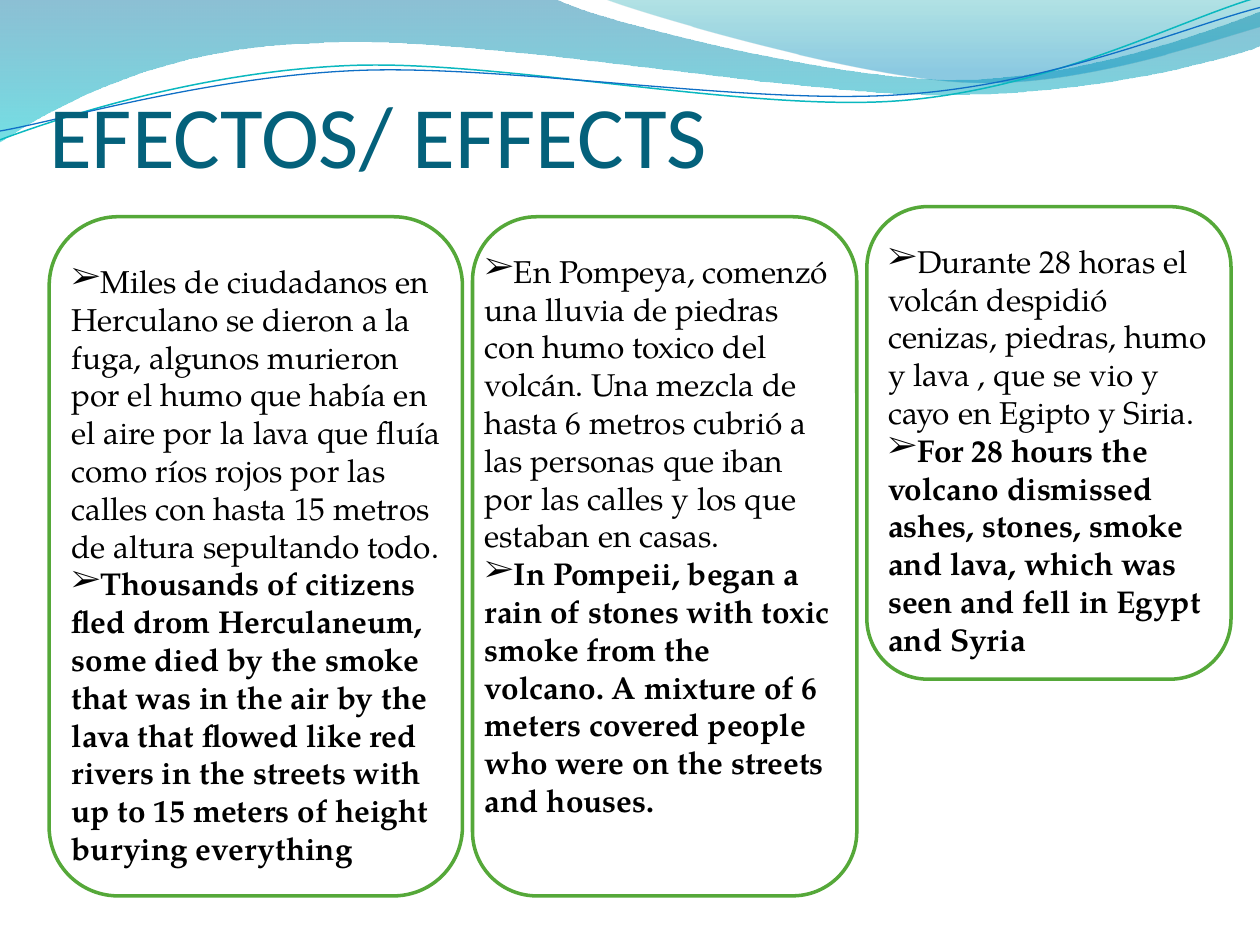
from math import cos, radians, sin

from lxml import etree
from pptx import Presentation
from pptx.dml.color import RGBColor
from pptx.enum.shapes import MSO_SHAPE
from pptx.enum.text import MSO_ANCHOR, PP_ALIGN
from pptx.oxml.ns import qn
from pptx.util import Inches, Pt

ROUNDED = MSO_SHAPE.ROUNDED_RECTANGLE
LEFT = PP_ALIGN.LEFT
TOP, BOTTOM = MSO_ANCHOR.TOP, MSO_ANCHOR.BOTTOM

THEME = {
    "title_font": "Calibri", "title_size": Pt(50), "title": RGBColor.from_string("04617B"),
    "body_font": "TeX Gyre Pagella", "body_size": Pt(18), "body": RGBColor.from_string("000000"),
    "frame": RGBColor.from_string("55A839"), "frame_width": Pt(2),
    # Gradient stops: position, colour, opacity in percent
    "wide_wave": [(0, "0074A1", 45), (1, "00C6CF", 55)],
    "right_wave": [(0, "00A1A9", 30), (0.8, "008BBF", 45)],
    "teal_line": ("0AB8BF", 0.85), "blue_line": ("0F6FC6", 0.75),
}
TILT = 2.7  # degrees anticlockwise


def add_outline(shapes, start, segments, closed):
    """Draw straight (2 numbers) and cubic Bézier (6 numbers) segments."""
    points = [start]
    for segment in segments:
        points += zip(segment[::2], segment[1::2])
    corners = [(Inches(x), Inches(y)) for x, y in points]
    builder = shapes.build_freeform(*corners[0])
    builder.add_line_segments(corners[1:], close=closed)
    shape = builder.convert_to_shape()
    shape.shadow.inherit = False
    # Join each three steps of a curve into one Bézier element
    steps = iter(list(shape._element.iter(qn("a:lnTo"))))
    for segment in segments:
        first = next(steps)
        if len(segment) == 6:
            curve = etree.Element(qn("a:cubicBezTo"))
            first.addprevious(curve)
            for step in (first, next(steps), next(steps)):
                curve.append(step[0])
                step.getparent().remove(step)
    return shape


def untilt(numbers, centre):
    """Turn points clockwise by TILT, so that the shape's rotation restores them."""
    c, s = cos(radians(TILT)), sin(radians(TILT))
    turned = []
    for x, y in zip(numbers[::2], numbers[1::2]):
        dx, dy = x - centre[0], y - centre[1]
        turned += [centre[0] + dx * c - dy * s, centre[1] + dx * s + dy * c]
    return turned


presentation = Presentation()
presentation.slide_width = Inches(10)
presentation.slide_height = Inches(7.5)
slide = presentation.slides.add_slide(presentation.slide_layouts[5])
shapes = slide.shapes

# Translucent waves across the top
waves = [
    ("wide_wave", (0, 0), [
        (4.4, -0.01), (4.76, 0.17, 6.64, 0.63, 7.58, 0.63),
        (8.53, 0.63, 9.58, 0.26, 10, 0.09), (10.01, 0.36),
        (9.83, 0.44, 8.7, 0.76, 7.46, 0.75), (6.22, 0.75, 3.82, 0.28, 2.57, 0.34),
        (1.29, 0.36, 0.46, 0.83, -0.01, 1.13), (0, 0)]),
    ("right_wave", (4.79, -0.01), [
        (5.09, 0.11, 6.82, 0.62, 7.69, 0.65), (8.56, 0.69, 9.61, 0.32, 10, 0.21),
        (10, 0), (4.79, -0.01)]),
]
for name, start, segments in waves:
    wave = add_outline(shapes, start, segments, True)
    wave.line.fill.background()
    wave.fill.gradient()
    wave.fill.gradient_angle = 270
    for stop, (position, colour, _) in zip(wave.fill.gradient_stops, THEME[name]):
        stop.position = position
        stop.color.rgb = RGBColor.from_string(colour)
    for element, (_, _, opacity) in zip(wave._element.iter(qn("a:srgbClr")), THEME[name]):
        etree.SubElement(element, qn("a:alpha")).set("val", str(opacity * 1000))

# Thin tilted lines that follow the waves
wave_lines = [
    ("teal_line", (4.99, 0.58), (0, 1.11), [
        (0.48, 0.93, 1.58, 0.57, 2.77, 0.52), (3.95, 0.47, 5.93, 0.89, 7.13, 0.8),
        (8.33, 0.71, 9.38, 0.15, 9.98, -0.02)]),
    ("blue_line", (5, 0.59), (0, 1.04), [
        (0.47, 0.96, 1.64, 0.61, 2.83, 0.56), (4.03, 0.51, 5.97, 0.84, 7.17, 0.75),
        (8.36, 0.67, 9.41, 0.21, 10, 0.06)]),
]
for name, centre, start, segments in wave_lines:
    level_segments = [untilt(segment, centre) for segment in segments]
    wave_line = add_outline(shapes, untilt(start, centre), level_segments, False)
    wave_line.rotation = 360 - TILT
    colour, width = THEME[name]
    wave_line.fill.background()
    wave_line.line.color.rgb = RGBColor.from_string(colour)
    wave_line.line.width = Pt(width)

# Title, brought in front of the waves
title = shapes.title
shapes._spTree.append(title._element)
title.left, title.top, title.width, title.height = map(Inches, (0.39, 0.23, 9, 1.25))
frame = title.text_frame
frame.margin_left = frame.margin_right = frame.margin_bottom = 0
frame.margin_top = Inches(0.05)
frame.vertical_anchor = BOTTOM
paragraph = frame.paragraphs[0]
paragraph.alignment = LEFT
run = paragraph.add_run()
run.text = "EFECTOS/ EFFECTS"
run.font.name = THEME["title_font"]
run.font.size = THEME["title_size"]
run.font.color.rgb = THEME["title"]

# Columns: text box, frame, Spanish text, English text
columns = [
    ((0.47, 2.03, 3.13, 4.95), (0.39, 1.72, 3.28, 5.39),
     "Miles de ciudadanos en Herculano se dieron a la fuga, algunos murieron por el humo "
     "que había en el aire por la lava que fluía como ríos rojos por las calles con hasta "
     "15 metros de altura sepultando todo.",
     "Thousands of citizens fled drom Herculaneum, some died by the smoke that was in the "
     "air by the lava that flowed like red rivers in the streets with up to 15 meters of "
     "height burying everything"),
    ((3.75, 1.95, 2.97, 4.64), (3.75, 1.72, 3.05, 5.39),
     "En Pompeya, comenzó una lluvia de piedras con humo toxico del volcán. Una mezcla de "
     "hasta 6 metros cubrió a las personas que iban por las calles y los que estaban en casas.",
     "In Pompeii, began a rain of stones with toxic smoke from the volcano. A mixture of 6 "
     "meters covered people who were on the streets and houses."),
    ((6.95, 1.87, 2.81, 3.43), (6.88, 1.64, 2.89, 3.75),
     "Durante 28 horas el volcán despidió cenizas, piedras, humo y lava , que se vio y cayo "
     "en Egipto y Siria.",
     "For 28 hours the volcano dismissed ashes, stones, smoke and lava, which was seen and "
     "fell in Egypt and Syria"),
]
for text_area, frame_area, spanish, english in columns:
    text_box = shapes.add_textbox(*map(Inches, text_area))
    frame = text_box.text_frame
    frame.word_wrap = True
    frame.vertical_anchor = TOP
    for text, bold in ((spanish, False), (english, True)):
        paragraph = frame.add_paragraph() if bold else frame.paragraphs[0]
        properties = paragraph._p.get_or_add_pPr()
        properties.set("marL", "0")
        properties.set("indent", "0")
        etree.SubElement(properties, qn("a:buFont")).set("typeface", THEME["body_font"])
        etree.SubElement(properties, qn("a:buChar")).set("char", "➢")
        paragraph.alignment = LEFT
        run = paragraph.add_run()
        run.text = text
        run.font.name = THEME["body_font"]
        run.font.size = THEME["body_size"]
        run.font.bold = bold
        run.font.color.rgb = THEME["body"]

    border = shapes.add_shape(ROUNDED, *map(Inches, frame_area))
    border.shadow.inherit = False
    border.fill.background()
    border.line.color.rgb = THEME["frame"]
    border.line.width = THEME["frame_width"]

presentation.save("out.pptx")
